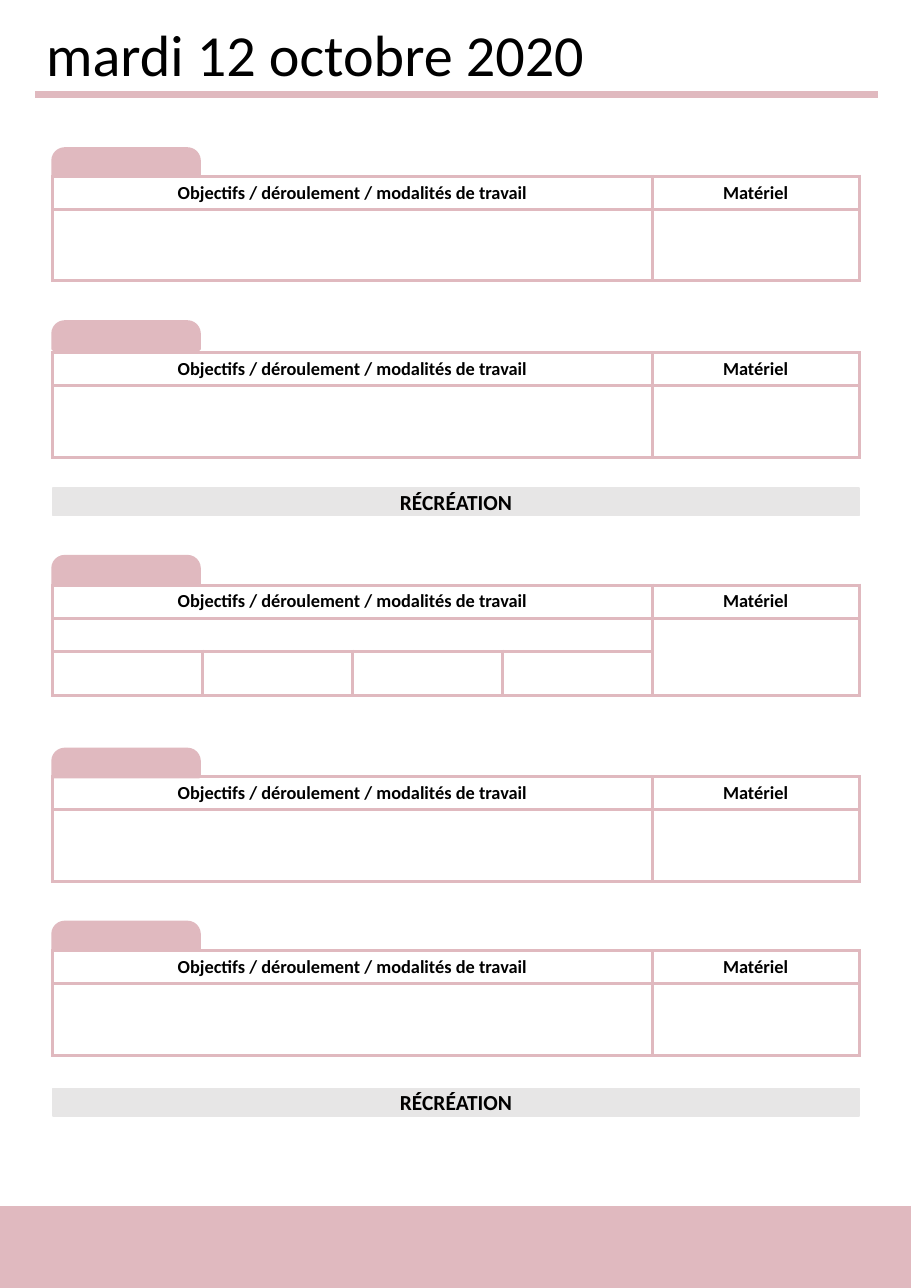
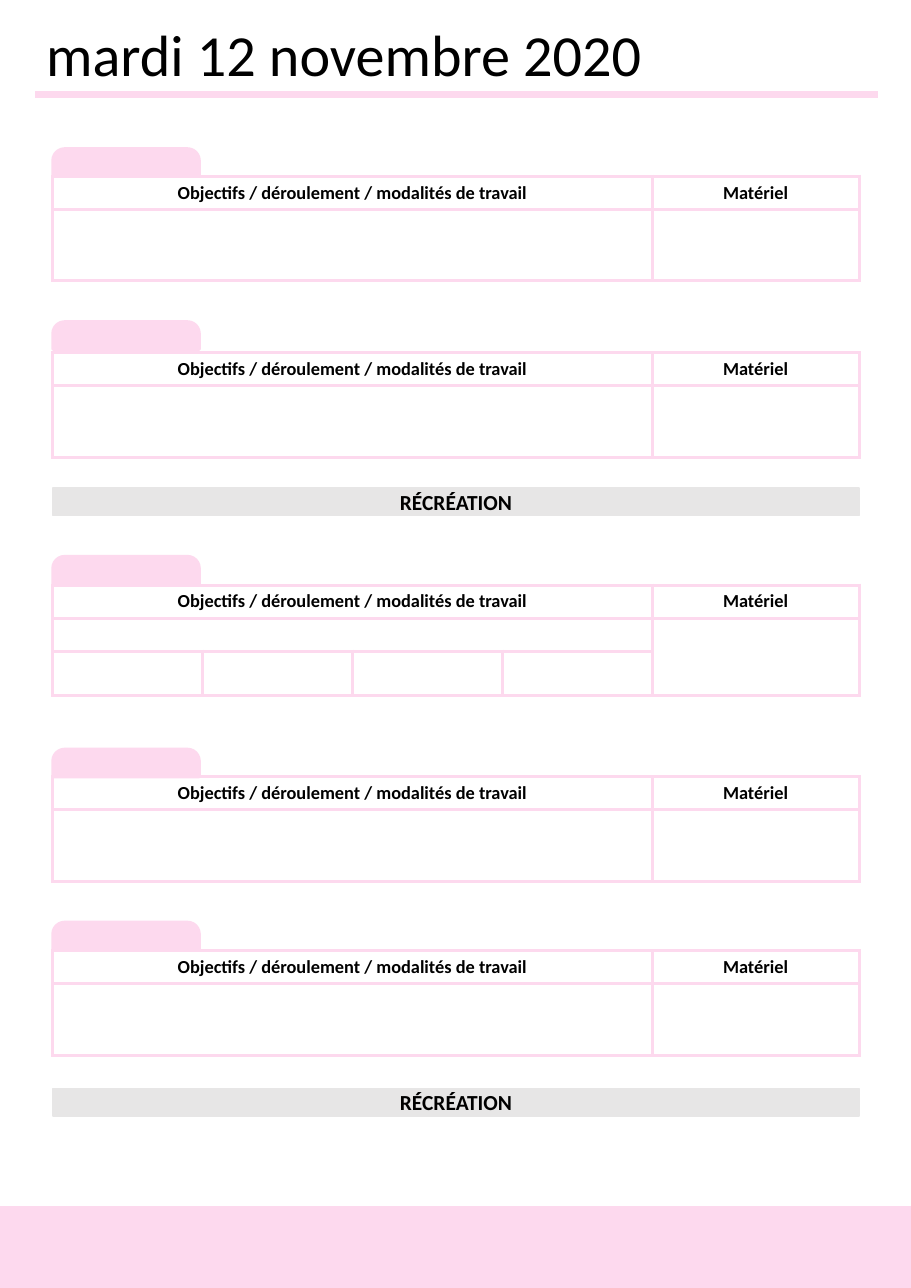
from dataclasses import dataclass

import lxml.etree
import pptx
import pptx.dml.color
import pptx.enum.shapes
import pptx.enum.text
import pptx.oxml.ns
import pptx.util

PX = 9144  # EMU per px, at 100 px to the inch
PAGE_WIDTH, PAGE_HEIGHT = 827, 1169
LEFT, WIDTH = 48, 732
GROUP_COLUMN = 136
MAIN_COLUMN = 4 * GROUP_COLUMN
MATERIAL_COLUMN = WIDTH - MAIN_COLUMN
HEADER_HEIGHT = 30
BAR_HEIGHT = 25

SHAPE = pptx.enum.shapes.MSO_SHAPE
CENTER = pptx.enum.text.PP_ALIGN.CENTER
MIDDLE = pptx.enum.text.MSO_ANCHOR.MIDDLE


@dataclass(frozen=True)
class Theme:
    font: str = "Calibri"
    text: str = "000000"
    paper: str = "FFFFFF"
    recess: str = "E7E6E6"
    title_size: int = 38
    recess_size: int = 14
    header_size: int = 12
    rule_width: float = 4.75
    border_width: float = 2.25
    tab_width: float = 2


THEME = Theme()

# Date and accent colour of each day
DAYS = [
    ("mardi 12 octobre 2020", "E0B9BF"),
    ("mardi 12 novembre 2020", "FDD9EE"),
]
# Tab top, table top and whether the lesson is split into groups
LESSONS = [
    (135, 160, False),
    (292, 320, False),
    (505, 531, True),
    (680, 705, False),
    (837, 863, False),
]
RECESS_TOPS = [443, 988]


def emu(*lengths):
    return [pptx.util.Emu(length * PX) for length in lengths]


def rgb(color):
    return pptx.dml.color.RGBColor.from_string(color)


def write_text(frame, text, *, size, bold=False, align=None):
    paragraph = frame.paragraphs[0]
    paragraph.alignment = align
    run = paragraph.add_run()
    run.text = text
    run.font.name = THEME.font
    run.font.size = pptx.util.Pt(size)
    run.font.bold = bold
    run.font.color.rgb = rgb(THEME.text)


def add_block(slide, box, color, *, kind=SHAPE.RECTANGLE, line_width=1):
    shape = slide.shapes.add_shape(kind, *emu(*box))
    shape.shadow.inherit = False
    shape.fill.solid()
    shape.fill.fore_color.rgb = rgb(color)
    shape.line.color.rgb = rgb(color)
    shape.line.width = pptx.util.Pt(line_width)
    return shape


def add_title(slide, text, accent):
    box = slide.shapes.add_textbox(*emu(32, 12, 626, 74))
    box.text_frame.word_wrap = True
    box.text_frame.auto_size = pptx.enum.text.MSO_AUTO_SIZE.SHAPE_TO_FIT_TEXT
    write_text(box.text_frame, text, size=THEME.title_size)

    rule = slide.shapes.add_connector(
        pptx.enum.shapes.MSO_CONNECTOR.STRAIGHT, *emu(32, 86, 797, 86))
    rule.line.color.rgb = rgb(accent)
    rule.line.width = pptx.util.Pt(THEME.rule_width)
    lxml.etree.SubElement(rule._element.spPr, pptx.oxml.ns.qn("a:effectLst"))


def style_cell(cell, accent):
    qn = pptx.oxml.ns.qn
    properties = cell._tc.get_or_add_tcPr()
    for side in ("a:lnL", "a:lnR", "a:lnT", "a:lnB"):
        border = lxml.etree.SubElement(
            properties, qn(side), w=str(pptx.util.Pt(THEME.border_width)))
        fill = lxml.etree.SubElement(border, qn("a:solidFill"))
        lxml.etree.SubElement(fill, qn("a:srgbClr"), val=accent)
    cell.fill.solid()
    cell.fill.fore_color.rgb = rgb(THEME.paper)
    cell.margin_top = cell.margin_bottom = 0
    cell.vertical_anchor = MIDDLE


def add_lesson_table(slide, top, accent, *, grouped):
    if grouped:
        columns = [GROUP_COLUMN] * 4 + [MATERIAL_COLUMN]
        rows = [HEADER_HEIGHT, 30, 40]
    else:
        columns = [MAIN_COLUMN, MATERIAL_COLUMN]
        rows = [HEADER_HEIGHT, 65]
    table = slide.shapes.add_table(
        len(rows), len(columns), *emu(LEFT, top, WIDTH, sum(rows))).table
    table.first_row = table.horz_banding = False
    for column, width in zip(table.columns, emu(*columns)):
        column.width = width
    for row, height in zip(table.rows, emu(*rows)):
        row.height = height
    for cell in table.iter_cells():
        style_cell(cell, accent)

    last = len(columns) - 1
    if grouped:
        for row in range(2):
            table.cell(row, 0).merge(table.cell(row, last - 1))
        table.cell(1, last).merge(table.cell(2, last))
    headers = [(0, "Objectifs / déroulement / modalités de travail"),
               (last, "Matériel")]
    for column, text in headers:
        write_text(table.cell(0, column).text_frame, text,
                   size=THEME.header_size, bold=True, align=CENTER)


def add_lesson(slide, tab_top, table_top, accent, *, grouped):
    add_lesson_table(slide, table_top, accent, grouped=grouped)
    tab = add_block(slide, (LEFT, tab_top, 133, BAR_HEIGHT), accent,
                    kind=SHAPE.ROUND_2_SAME_RECTANGLE,
                    line_width=THEME.tab_width)
    tab.adjustments[0] = 0.43


def add_recess(slide, top):
    bar = add_block(slide, (LEFT, top, WIDTH, BAR_HEIGHT), THEME.recess)
    bar.text_frame.vertical_anchor = MIDDLE
    write_text(bar.text_frame, "RÉCRÉATION",
               size=THEME.recess_size, bold=True, align=CENTER)


def add_day(presentation, date, accent):
    slide = presentation.slides.add_slide(presentation.slide_layouts[6])
    add_title(slide, date, accent)
    for tab_top, table_top, grouped in LESSONS:
        add_lesson(slide, tab_top, table_top, accent, grouped=grouped)
    for top in RECESS_TOPS:
        add_recess(slide, top)
    # Footer band
    add_block(slide, (0, 1095, PAGE_WIDTH, PAGE_HEIGHT - 1095), accent)


def main():
    presentation = pptx.Presentation()
    presentation.slide_width, presentation.slide_height = emu(
        PAGE_WIDTH, PAGE_HEIGHT)
    for date, accent in DAYS:
        add_day(presentation, date, accent)
    presentation.save("out.pptx")


if __name__ == "__main__":
    main()
